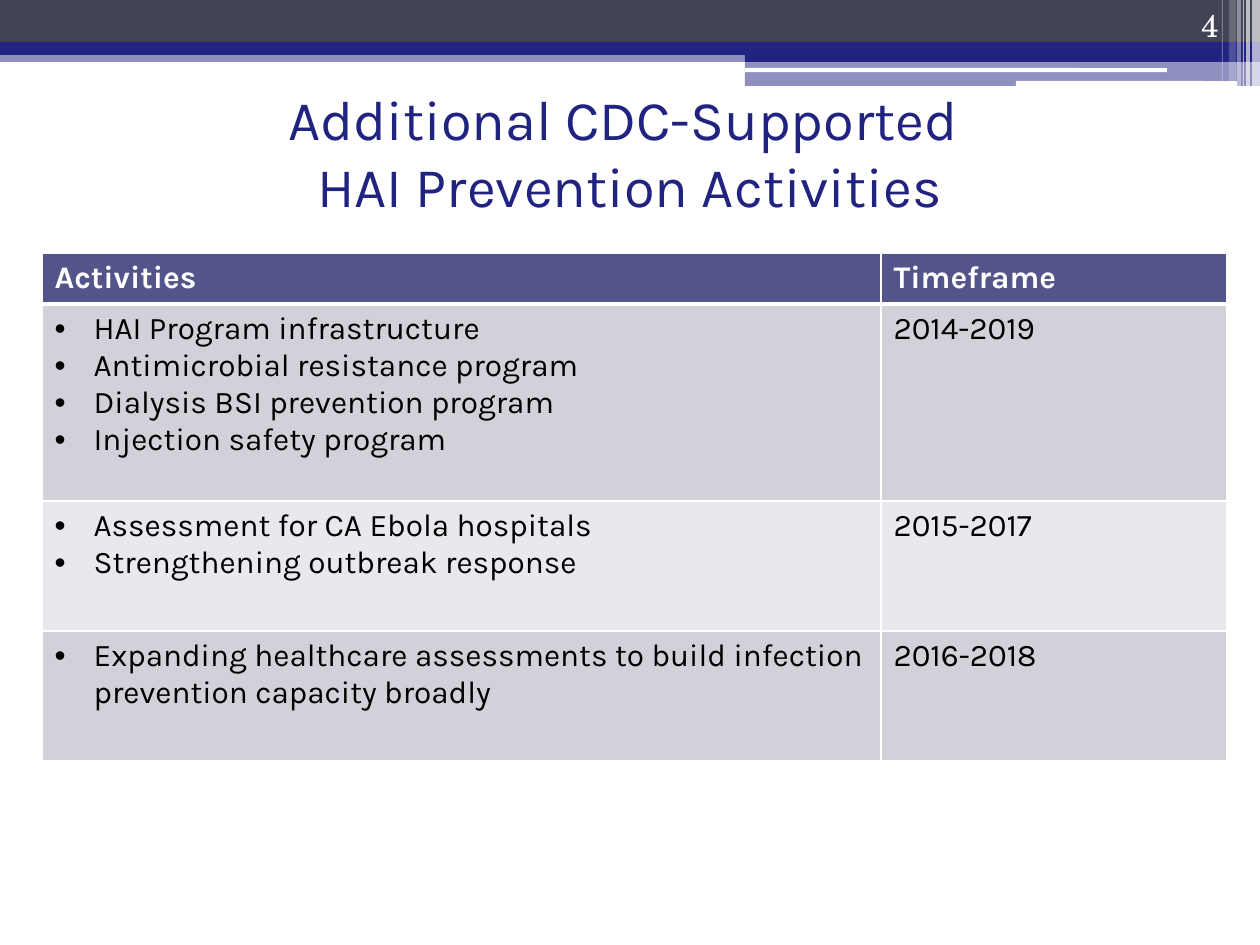
import pptx
import pptx.util
import pptx.dml.color
import pptx.enum.shapes
import pptx.enum.text
import pptx.oxml.ns
import lxml.etree

THEME = {
    "navy": "212381", "slate": "424456", "white": "FFFFFF", "black": "000000",
    "header": "53548A", "bands": ["D1D1DA", "E9E9ED"],
    "body_font": "Karla", "number_font": "TeX Gyre Schola",
    "title_size": 32, "body_size": 18,
}
EMU_PER_PX = 914400 / 126
qn = pptx.oxml.ns.qn
rgb = pptx.dml.color.RGBColor.from_string
anchors = pptx.enum.text.MSO_ANCHOR
aligns = pptx.enum.text.PP_ALIGN
kinds = pptx.enum.shapes.MSO_SHAPE


def px(*lengths):
    scaled = [pptx.util.Emu(round(length * EMU_PER_PX)) for length in lengths]
    return scaled if len(scaled) > 1 else scaled[0]


def style_text(frame, size, color, font=THEME["body_font"], bold=False, align=aligns.LEFT):
    for paragraph in frame.paragraphs:
        paragraph.alignment = align
        for run in paragraph.runs:
            run.font.name = font
            run.font.size = pptx.util.Pt(size)
            run.font.bold = bold
            run.font.color.rgb = rgb(THEME[color])


deck = pptx.Presentation()
deck.slide_width, deck.slide_height = px(1260, 945)
slide = deck.slides.add_slide(deck.slide_layouts[6])

banner = [
    (kinds.RECTANGLE, 0, 50, 1260, 12, "navy", 50),
    (kinds.RECTANGLE, 0, 0, 1260, 42, "slate", 100),
    (kinds.RECTANGLE, 0, 42, 1260, 13, "navy", 100),
    (kinds.RECTANGLE, 745, 49, 515, 13, "navy", 100),
    (kinds.RECTANGLE, 745, 62, 515, 24, "navy", 50),
    (kinds.ROUNDED_RECTANGLE, 745, 68, 422, 4, "white", 100),
    (kinds.ROUNDED_RECTANGLE, 1016, 81, 221, 5, "white", 100),
    (kinds.RECTANGLE, 1252, 0, 8, 86, "white", 65),
    (kinds.RECTANGLE, 1246, 0, 4, 86, "white", 65),
    (kinds.RECTANGLE, 1243, 0, 1, 86, "white", 60),
    (kinds.RECTANGLE, 1237, 0, 4, 86, "white", 40),
    (kinds.RECTANGLE, 1229, 0, 7, 81, "white", 20),
    (kinds.RECTANGLE, 1222, 0, 1, 81, "white", 30),
]
for kind, left, top, width, height, color, opacity in banner:
    stripe = slide.shapes.add_shape(kind, *px(left, top, width, height))
    stripe.shadow.inherit = False
    stripe.line.fill.background()
    stripe.fill.solid()
    stripe.fill.fore_color.rgb = rgb(THEME[color])
    if opacity < 100:
        tint = stripe.fill._xPr.find(".//" + qn("a:srgbClr"))
        lxml.etree.SubElement(tint, qn("a:alpha"), val=str(opacity * 1000))

title = slide.shapes.add_textbox(*px(63, 84, 1134, 136)).text_frame
title.word_wrap = True
title.vertical_anchor = anchors.MIDDLE
title.text = "Additional CDC-Supported \vHAI Prevention Activities"
style_text(title, THEME["title_size"], "navy", align=aligns.CENTER)

activities = [
    (["Activities"], "Timeframe", 51),
    (["HAI Program infrastructure", "Antimicrobial resistance program",
      "Dialysis BSI prevention program", "Injection safety program"], "2014-2019", 197),
    (["Assessment for CA Ebola hospitals", "Strengthening outbreak response"], "2015-2017", 130),
    (["Expanding healthcare assessments to build infection prevention capacity broadly"],
     "2016-2018", 130),
]
timeline = slide.shapes.add_table(len(activities), 2, *px(42, 253, 1185, 508)).table
timeline.first_row = timeline.horz_banding = False
timeline.columns[0].width, timeline.columns[1].width = px(839, 346)

for row, (programs, years, height) in enumerate(activities):
    timeline.rows[row].height = px(height)
    for column, lines in enumerate([programs, [years]]):
        cell = timeline.cell(row, column)
        cell.text_frame.text = "\n".join(lines)
        if row and column == 0:
            for paragraph in cell.text_frame.paragraphs:
                indent = paragraph._p.get_or_add_pPr()
                indent.set("marL", str(px(39)))
                indent.set("indent", str(px(-39)))
                lxml.etree.SubElement(indent, qn("a:buFont"), typeface="Arial")
                lxml.etree.SubElement(indent, qn("a:buChar"), char="•")
        style_text(cell.text_frame, THEME["body_size"], "black" if row else "white", bold=row == 0)

        cell_format = cell._tc.get_or_add_tcPr()
        for side in "LRTB":
            under_header = (row, side) in [(0, "B"), (1, "T")]
            weight = pptx.util.Pt(3 if under_header else 1)
            border = lxml.etree.SubElement(cell_format, qn("a:ln" + side), w=str(weight))
            stroke = lxml.etree.SubElement(border, qn("a:solidFill"))
            lxml.etree.SubElement(stroke, qn("a:srgbClr"), val=THEME["white"])
        cell.fill.solid()
        cell.fill.fore_color.rgb = rgb(THEME["bands"][(row - 1) % 2] if row else THEME["header"])

page_number = slide.shapes.add_textbox(*px(1126, 0, 105, 50)).text_frame
page_number.word_wrap = True
page_number.vertical_anchor = anchors.BOTTOM
page_number.text = "4"
style_text(page_number, THEME["body_size"], "white", THEME["number_font"], align=aligns.RIGHT)

deck.save("out.pptx")
